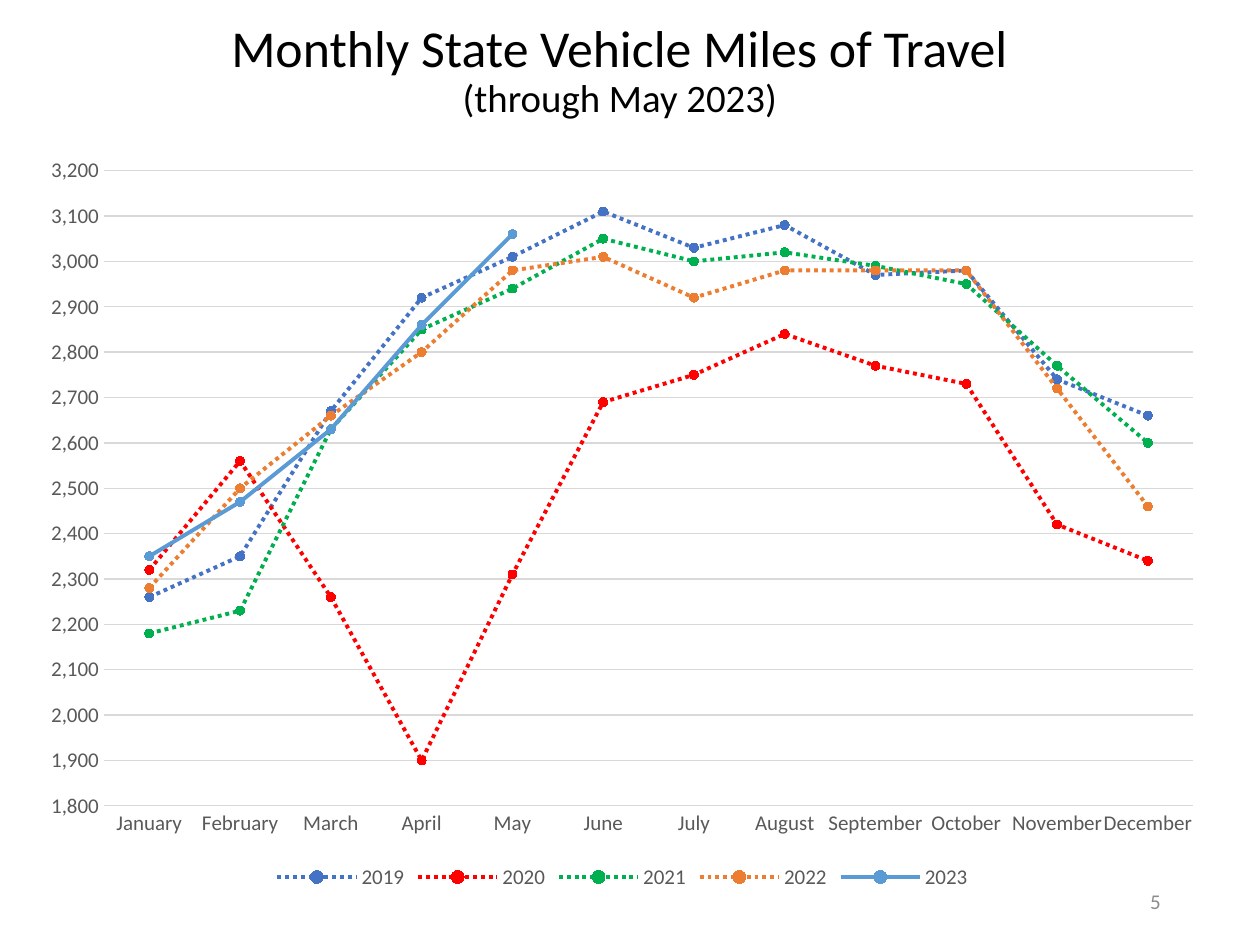
from dataclasses import dataclass

from lxml import etree
from pptx import Presentation
from pptx import util as u
from pptx.chart.data import CategoryChartData
from pptx.dml.color import RGBColor
from pptx.enum import chart as ch, dml, text
from pptx.oxml import ns


@dataclass(frozen=True)
class Theme:
    face: str = "Calibri"
    ink: str = "000000"
    label: str = "595959"
    page: str = "8C8C8C"
    grid: str = "D9D9D9"
    head: float = 29.6
    sub: float = 22.2
    small: float = 12
    thin: float = 0.75
    thick: float = 2.25
    dot: int = 5


THEME = Theme()
MONTHS = ("January February March April May June July August "
          "September October November December").split()
YEARS = {
    "2019": ("4472C4", [2260, 2350, 2670, 2920, 3010, 3110,
                        3030, 3080, 2970, 2980, 2740, 2660]),
    "2020": ("FF0000", [2320, 2560, 2260, 1900, 2310, 2690,
                        2750, 2840, 2770, 2730, 2420, 2340]),
    "2021": ("00B050", [2180, 2230, 2630, 2850, 2940, 3050,
                        3000, 3020, 2990, 2950, 2770, 2600]),
    "2022": ("ED7D31", [2280, 2500, 2660, 2800, 2980, 3010,
                        2920, 2980, 2980, 2980, 2720, 2460]),
    "2023": ("5B9BD5", [2350, 2470, 2630, 2860, 3060] + [None] * 7),
}
PLOT = {"x": 0.065, "y": 0.036, "w": 0.914, "h": 0.846}


def apply(item, form):
    for name, value in form.items():
        setattr(item, name, value)


def style(font, size, tint):
    apply(font, {"name": THEME.face, "size": u.Pt(size), "bold": False})
    font.color.rgb = RGBColor.from_string(tint)


def stroke(line, tint, width):
    line.color.rgb = RGBColor.from_string(tint)
    line.width = u.Pt(width)


def add_text(slide, box, rows, tint, align, anchor, gap=1.0):
    frame = slide.shapes.add_textbox(*map(u.Inches, box)).text_frame
    apply(frame, {"word_wrap": True, "vertical_anchor": anchor})
    for i, (words, size) in enumerate(rows):
        para = frame.add_paragraph() if i else frame.paragraphs[0]
        apply(para, {"alignment": align, "line_spacing": gap})
        run = para.add_run()
        run.text = words
        style(run.font, size, tint)


def set_axis(axis, form):
    apply(axis, {"major_tick_mark": ch.XL_TICK_MARK.NONE,
                 "minor_tick_mark": ch.XL_TICK_MARK.NONE, **form})
    style(axis.tick_labels.font, THEME.small, THEME.label)


def set_line(series, tint, dash):
    apply(series, {"smooth": False})
    stroke(series.format.line, tint, THEME.thick)
    series.format.line.dash_style = dash
    mark = series.marker
    apply(mark, {"style": ch.XL_MARKER_STYLE.CIRCLE, "size": THEME.dot})
    mark.format.fill.solid()
    mark.format.fill.fore_color.rgb = RGBColor.from_string(tint)
    stroke(mark.format.line, tint, THEME.thin)


def set_plot(chart):
    area = chart.plots[0]._element.getparent()
    for old in area.findall(ns.qn("c:layout")):
        area.remove(old)
    layout = etree.Element(ns.qn("c:layout"))
    area.insert(0, layout)
    manual = etree.SubElement(layout, ns.qn("c:manualLayout"))
    parts = {"layoutTarget": "inner", "xMode": "edge", "yMode": "edge", **PLOT}
    for name, value in parts.items():
        etree.SubElement(manual, ns.qn(f"c:{name}")).set("val", str(value))


def add_chart(slide, box):
    data = CategoryChartData(number_format="#,##0")
    data.categories = MONTHS
    for year, (tint, values) in YEARS.items():
        data.add_series(year, values)
    chart = slide.shapes.add_chart(
        ch.XL_CHART_TYPE.LINE_MARKERS, *map(u.Inches, box), data).chart
    apply(chart, {"has_title": False, "has_legend": True})
    style(chart.font, THEME.small, THEME.label)
    apply(chart.legend, {"position": ch.XL_LEGEND_POSITION.BOTTOM,
                         "include_in_layout": False})
    style(chart.legend.font, THEME.small, THEME.label)
    chart.plots[0].vary_by_categories = False

    months, miles = chart.category_axis, chart.value_axis
    set_axis(months, {"has_major_gridlines": False})
    stroke(months.format.line, THEME.grid, THEME.thin)
    months._element.find(".//" + ns.qn("a:bodyPr")).set("rot", "-60000000")
    set_axis(miles, {"minimum_scale": 1800, "maximum_scale": 3200,
                     "major_unit": 100, "has_major_gridlines": True})
    miles.format.line.fill.background()
    stroke(miles.major_gridlines.format.line, THEME.grid, THEME.thin)
    apply(miles.tick_labels, {"number_format": "#,##0",
                              "number_format_is_linked": False})

    for series in chart.plots[0].series:
        tint, values = YEARS[series.name]
        dash = dml.MSO_LINE.SOLID if None in values else dml.MSO_LINE.ROUND_DOT
        set_line(series, tint, dash)
    set_plot(chart)


def main():
    deck = Presentation()
    apply(deck, {"slide_width": u.Inches(10), "slide_height": u.Inches(7.5)})
    slide = deck.slides.add_slide(deck.slide_layouts[6])
    add_chart(slide, (0.21, 1.14, 9.46, 5.96))
    add_text(slide, (7.06, 6.95, 2.25, 0.4), [("5", THEME.small)],
             THEME.page, text.PP_ALIGN.RIGHT, text.MSO_ANCHOR.MIDDLE)
    add_text(slide, (0.61, 0.08, 8.62, 0.93),
             [("Monthly State Vehicle Miles of Travel", THEME.head),
              ("(through May 2023)", THEME.sub)],
             THEME.ink, text.PP_ALIGN.CENTER, text.MSO_ANCHOR.BOTTOM, 0.9)
    deck.save("out.pptx")


if __name__ == "__main__":
    main()
